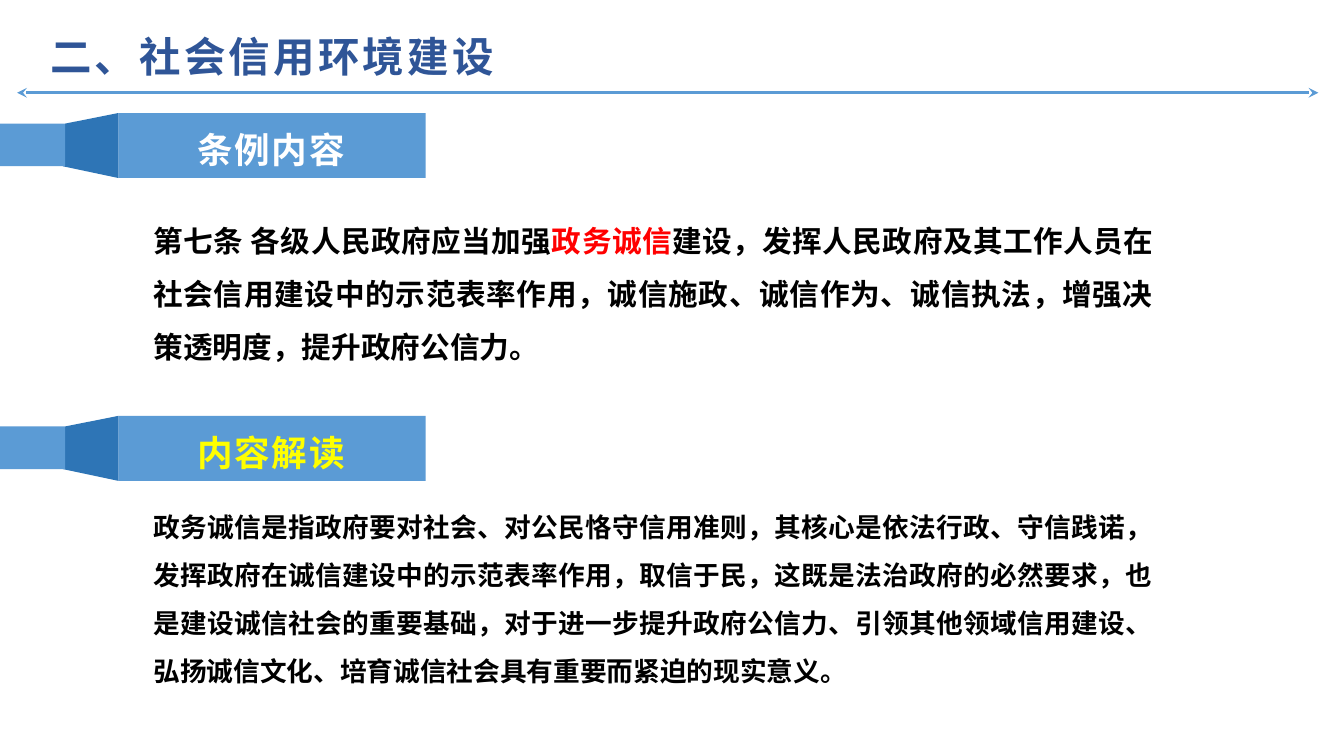
from lxml.etree import SubElement
from pptx import Presentation
from pptx.dml.color import RGBColor
from pptx.enum.shapes import MSO_CONNECTOR, MSO_SHAPE
from pptx.enum.text import MSO_AUTO_SIZE, PP_ALIGN
from pptx.oxml.ns import qn
from pptx.util import Inches, Pt

FONT = "Noto Sans CJK SC"
NAVY = RGBColor(0x2F, 0x55, 0x97)
BLUE = RGBColor(0x5B, 0x9B, 0xD5)
DARK_BLUE = RGBColor(0x2E, 0x75, 0xB6)
WHITE = RGBColor(0xFF, 0xFF, 0xFF)
YELLOW = RGBColor(0xFF, 0xFF, 0x00)
RED = RGBColor(0xFF, 0x00, 0x00)
BLACK = RGBColor(0x00, 0x00, 0x00)

prs = Presentation()
prs.slide_width, prs.slide_height = Inches(12.6), Inches(7.09)
slide = prs.slides.add_slide(prs.slide_layouts[6])
shapes = slide.shapes


def add_text(left, top, width, height, parts, size, align, spacing=0):
    """Add a bold one-paragraph text box from (text, colour) parts."""
    box = shapes.add_textbox(Inches(left), Inches(top), Inches(width), Inches(height))
    frame = box.text_frame
    frame.word_wrap = True
    frame.auto_size = MSO_AUTO_SIZE.SHAPE_TO_FIT_TEXT
    paragraph = frame.paragraphs[0]
    paragraph.alignment = align
    paragraph.line_spacing = 1.5
    for text, colour in parts:
        run = paragraph.add_run()
        run.text = text
        run.font.name = FONT
        run.font.size = Pt(size)
        run.font.bold = True
        run.font.color.rgb = colour
        # East Asian typeface and letter spacing
        props = run.font._element
        SubElement(props, qn("a:ea")).set("typeface", FONT)
        props.set("spc", str(int(spacing * 100)))
    return frame


def paint(shape, colour):
    shape.shadow.inherit = False
    shape.fill.solid()
    shape.fill.fore_color.rgb = colour
    shape.line.fill.background()


# Title
title = add_text(0.42, 0.03, 11.68, 0.76, [("二、社会信用环境建设", NAVY)],
                 28, PP_ALIGN.LEFT, 2.2)
title.margin_left = title.margin_right = Inches(0.05)
title.margin_top = title.margin_bottom = Inches(0.03)

# Double-headed rule under the title
rule = shapes.add_connector(MSO_CONNECTOR.STRAIGHT, Inches(0.16), Inches(0.87),
                            Inches(12.36), Inches(0.87))
rule.line.color.rgb = BLUE
rule.line.width = Pt(2.25)
for end in ("a:headEnd", "a:tailEnd"):
    SubElement(rule.line._get_or_add_ln(), qn(end)).set("type", "stealth")
SubElement(rule._element.spPr, qn("a:effectLst"))

# Sections: ribbon top, heading, colour, body top, body height, body size, body parts
sections = [
    (1.06, "条例内容", WHITE, 1.87, 1.61, 20, [
        ("第七条 各级人民政府应当加强", BLACK),
        ("政务诚信", RED),
        ("建设，发挥人民政府及其工作人员在社会信用建设中的示范表率作用，"
         "诚信施政、诚信作为、诚信执法，增强决策透明度，提升政府公信力。", BLACK),
    ]),
    (3.9, "内容解读", YELLOW, 4.59, 1.92, 18, [
        ("政务诚信是指政府要对社会、对公民恪守信用准则，其核心是依法行政、守信践诺，"
         "发挥政府在诚信建设中的示范表率作用，取信于民，这既是法治政府的必然要求，"
         "也是建设诚信社会的重要基础，对于进一步提升政府公信力、引领其他领域信用建设、"
         "弘扬诚信文化、培育诚信社会具有重要而紧迫的现实意义。", BLACK),
    ]),
]
for top, heading, colour, body_top, body_height, body_size, body in sections:
    # Ribbon: front panel, fold and tail
    panel = shapes.add_shape(MSO_SHAPE.RECTANGLE, Inches(1.11), Inches(top),
                             Inches(2.88), Inches(0.61))
    paint(panel, BLUE)
    corners = [(Inches(x), Inches(top + dy)) for x, dy in
               [(0.59, 0.5), (0.61, 0.1), (1.11, 0), (1.11, 0.61)]]
    outline = shapes.build_freeform(*corners[0], scale=1.0)
    outline.add_line_segments(corners[1:], close=True)
    paint(outline.convert_to_shape(), DARK_BLUE)
    tail = shapes.add_shape(MSO_SHAPE.RECTANGLE, 0, Inches(top + 0.1),
                            Inches(0.61), Inches(0.4))
    paint(tail, BLUE)

    # Heading and body
    add_text(1.69, top - 0.11, 1.7, 0.71, [(heading, colour)],
             24, PP_ALIGN.CENTER, 1.2)
    add_text(1.34, body_top, 9.57, body_height, body, body_size, PP_ALIGN.JUSTIFY)

prs.save("out.pptx")
